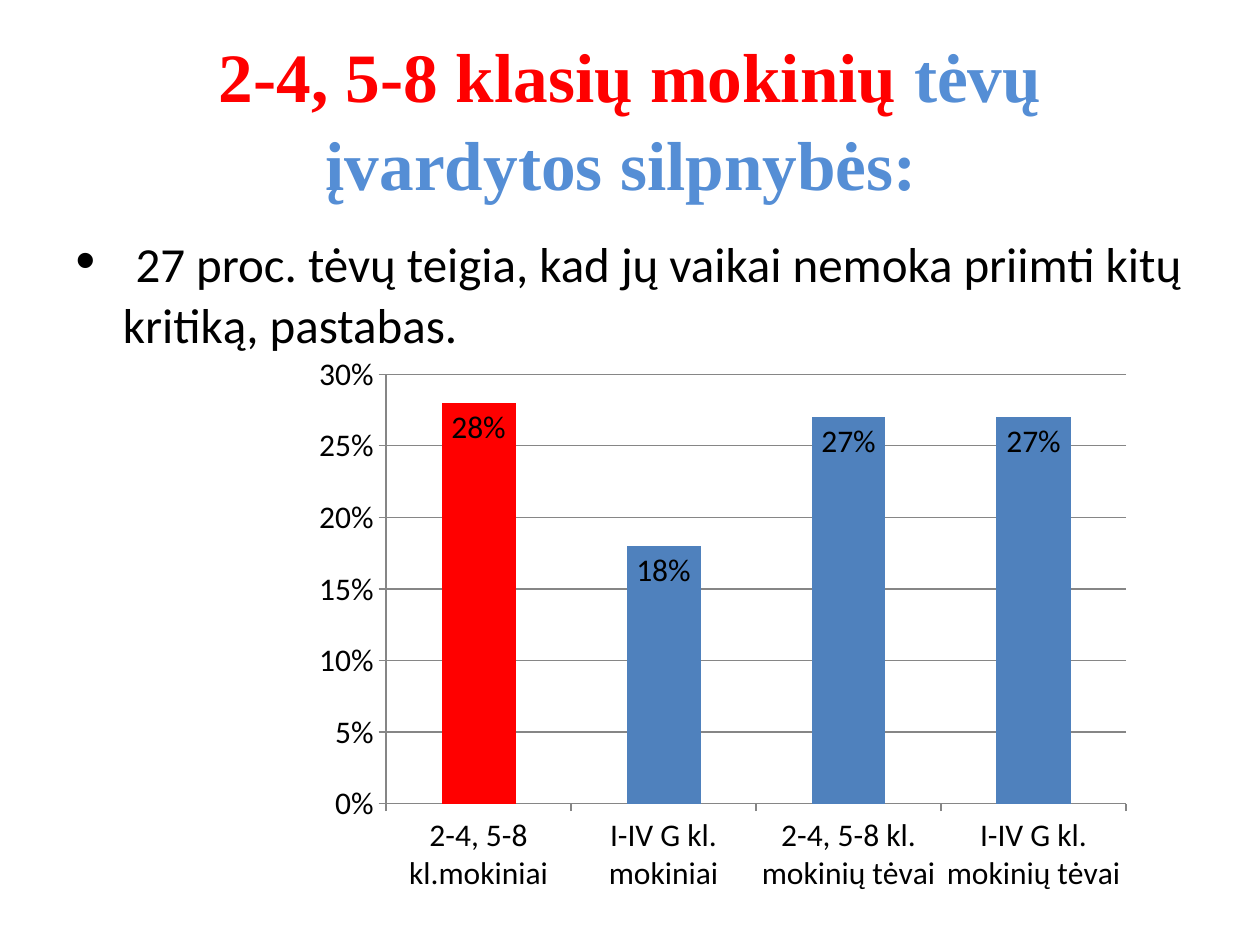
from dataclasses import dataclass

from pptx import Presentation
from pptx.chart import data as cd
from pptx.dml.color import RGBColor
from pptx.enum import chart as ch, text as tx
from pptx.util import Pt


@dataclass(frozen=True)
class Theme:
    head: str = "Times New Roman"
    body: str = "Calibri"
    red: str = "FF0000"
    blue: str = "558ED5"
    bar: str = "4F81BD"
    ink: str = "000000"
    grid: str = "868686"
    title_size: float = 39.6
    lead_size: float = 32
    body_size: float = 28
    chart_size: float = 18


T = Theme()


def set_font(font, color, **values):
    for name, value in values.items():
        setattr(font, name, value)
    font.color.rgb = RGBColor.from_string(color)


def place(sp, box):
    for name, value in zip(("left", "top", "width", "height"), box):
        setattr(sp, name, Pt(value))


def fill_text(sp, box, runs, **values):
    place(sp, box)
    tf = sp.text_frame
    tf.word_wrap = True
    tf.auto_size = tx.MSO_AUTO_SIZE.NONE
    p = tf.paragraphs[0]
    for content, color, size in runs:
        r = p.add_run()
        r.text = content
        set_font(r.font, color, size=Pt(size), **values)
    return tf


def add_title(s, box):
    runs = [
        ("2-4, 5-8 klasių mokinių ", T.red, T.title_size),
        ("tėvų įvardytos silpnybės: ", T.blue, T.title_size),
    ]
    tf = fill_text(s.shapes.title, box, runs, name=T.head, bold=True)
    tf.vertical_anchor = tx.MSO_ANCHOR.MIDDLE
    p = tf.paragraphs[0]
    p.alignment = tx.PP_ALIGN.CENTER
    p.line_spacing = 1.06


def add_body(s, box):
    runs = [
        (" ", T.ink, T.lead_size),
        ("27 proc. tėvų teigia, kad jų vaikai nemoka priimti kitų kritiką, pastabas.",
         T.ink, T.body_size),
    ]
    fill_text(s.placeholders[1], box, runs, name=T.body)


def add_bars(s, box):
    data = cd.CategoryChartData(number_format="0%")
    data.categories = [
        "2-4, 5-8 kl.mokiniai",
        "I-IV G kl. mokiniai",
        "2-4, 5-8 kl. mokinių tėvai",
        "I-IV G kl. mokinių tėvai",
    ]
    data.add_series("Series 1", (0.28, 0.18, 0.27, 0.27))
    chart = s.shapes.add_chart(
        ch.XL_CHART_TYPE.COLUMN_CLUSTERED, *map(Pt, box), data).chart
    chart.has_title = chart.has_legend = False
    set_font(chart.font, T.ink, name=T.body, size=Pt(T.chart_size))

    plot = chart.plots[0]
    plot.gap_width = 150
    plot.vary_by_categories = False
    series = plot.series[0]
    for part, color in ((series, T.bar), (series.points[0], T.red)):
        part.format.fill.solid()
        part.format.fill.fore_color.rgb = RGBColor.from_string(color)

    labels = series.data_labels
    values = dict(show_value=True, number_format="0%",
                  number_format_is_linked=False,
                  position=ch.XL_LABEL_POSITION.INSIDE_END)
    for name, value in values.items():
        setattr(labels, name, value)

    axis = chart.value_axis
    values = dict(minimum_scale=0, maximum_scale=0.3, major_unit=0.05,
                  has_major_gridlines=True)
    for name, value in values.items():
        setattr(axis, name, value)
    axis.tick_labels.number_format = "0%"
    axis.tick_labels.number_format_is_linked = False
    for part in (axis, chart.category_axis, axis.major_gridlines):
        part.format.line.color.rgb = RGBColor.from_string(T.grid)
        part.format.line.width = Pt(0.75)
    for part in (axis, chart.category_axis):
        part.major_tick_mark = ch.XL_TICK_MARK.OUTSIDE


def main():
    prs = Presentation()
    prs.slide_width, prs.slide_height = Pt(720), Pt(540)
    s = prs.slides.add_slide(prs.slide_layouts[1])
    add_title(s, (36, 21.6, 648, 90))
    add_body(s, (36, 126, 648, 356.4))
    add_bars(s, (172.8, 196.56, 480.24, 319.68))
    prs.save("out.pptx")


if __name__ == "__main__":
    main()
